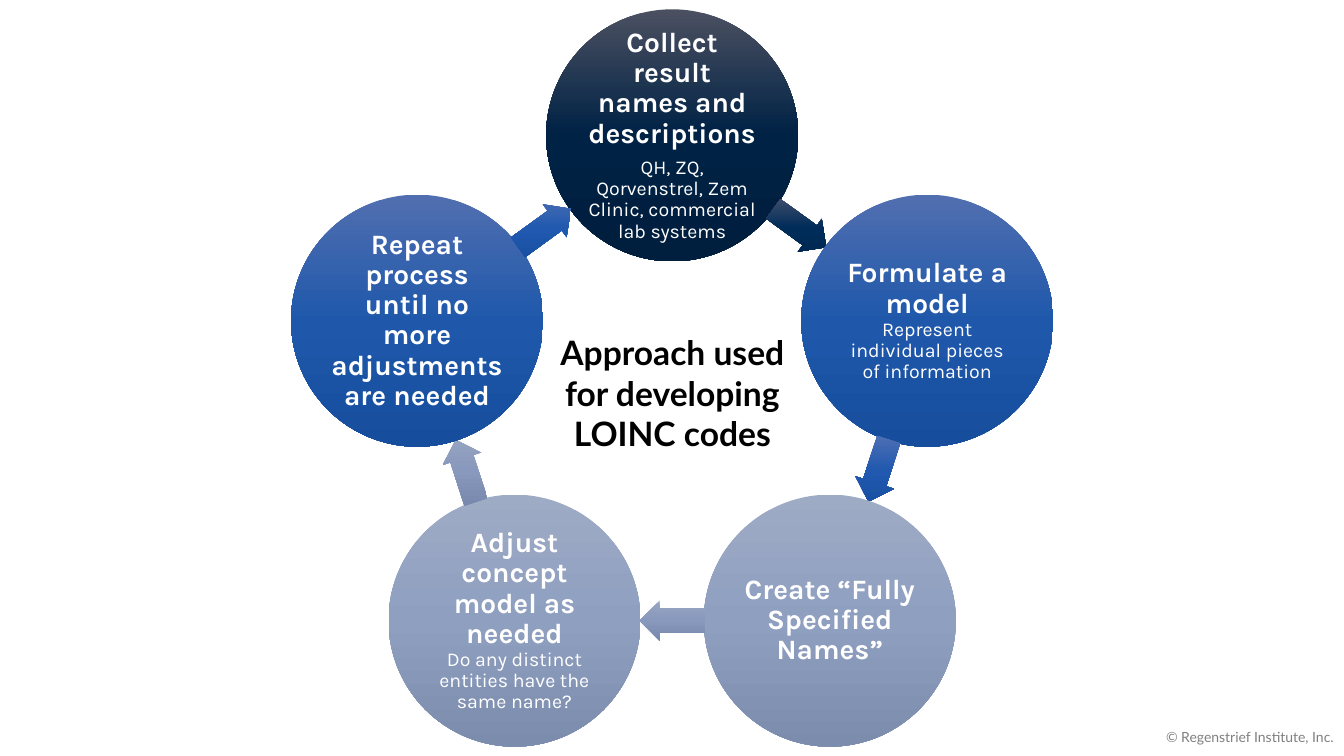
from copy import deepcopy
from math import cos, pi, sin

from pptx import Presentation
from pptx.dml import color
from pptx.enum import shapes, text
from pptx.util import Cm, Pt

CENTRE_X, CENTRE_Y, RING_RADIUS = 16.94, 10.17, 6.76
CIRCLE_SIZE = 6.35
ARROW_LENGTH, ARROW_HEIGHT = 1.65, 1.02

NAVY = (["4B5061", "002245", "001E3D"], ["4B546F", "002C59", "00274F"])
BLUE = (["516FB0", "1F58AB", "164D9D"], ["5170B4", "2059AF", "174EA1"])
GREY = (["9EABC5", "8F9FC0", "7C8CAD"], ["98A5C2", "8999BD", "7786AB"])

STEPS = [
    ("Collect result names and descriptions",
     "QH, ZQ,\vQorvenstrel, Zem Clinic, commercial lab systems", 6, NAVY),
    ("Formulate a model", "Represent individual pieces of information", 0, BLUE),
    ("Create “Fully Specified Names”", "", 0, GREY),
    ("Adjust concept model as needed",
     "Do any distinct entities have the same name?", 0, GREY),
    ("Repeat process until no more adjustments are needed", "", 0, BLUE),
]


def rgb(code):
    """Turn a hex string into a colour."""
    return color.RGBColor.from_string(code)


def ring_point(turn, radius):
    """Return the point on the ring after a number of fifths of a turn."""
    angle = turn * 2 * pi / 5
    return CENTRE_X + radius * sin(angle), CENTRE_Y - radius * cos(angle)


def add_gradient_shape(slide, kind, middle, size, colours):
    """Add a shape around its middle with a three-colour vertical gradient."""
    (x, y), (width, height) = middle, size
    shape = slide.shapes.add_shape(
        kind, Cm(x - width / 2), Cm(y - height / 2), Cm(width), Cm(height))
    shape.shadow.inherit = False
    shape.line.fill.background()
    shape.fill.gradient()
    shape.fill.gradient_angle = 270
    gradient = shape.fill._fill._gradFill
    gradient.set("rotWithShape", "0")
    first_stop = gradient.gsLst[0]
    first_stop.addnext(deepcopy(first_stop))
    for stop, code, position in zip(shape.fill.gradient_stops, colours, (0, 0.5, 1)):
        stop.color.rgb = rgb(code)
        stop.position = position
    return shape


def add_run(paragraph, words, font, size, code, bold=False):
    """Add one run, breaking the line at each vertical tab."""
    for index, line in enumerate(words.split("\v")):
        if index:
            paragraph.add_line_break()
        run = paragraph.add_run()
        run.text = line
        run.font.name, run.font.size, run.font.bold = font, Pt(size), bold
        run.font.color.rgb = rgb(code)


def add_step(slide, turn, heading, detail, gap, colours):
    """Add one circle of the cycle with its heading and detail."""
    circle = add_gradient_shape(
        slide, shapes.MSO_SHAPE.OVAL, ring_point(turn, RING_RADIUS),
        (CIRCLE_SIZE, CIRCLE_SIZE), colours)
    frame = circle.text_frame
    frame.word_wrap = True
    frame.vertical_anchor = text.MSO_ANCHOR.MIDDLE
    frame.margin_left = frame.margin_right = Cm(0.08)
    frame.margin_top = frame.margin_bottom = Cm(0.08)
    add_run(frame.paragraphs[0], heading, "Karla", 20, "FFFFFF", True)
    if detail:
        explanation = frame.add_paragraph()
        explanation.space_before = Pt(gap)
        add_run(explanation, detail, "Karla", 14, "FFFFFF")
    for paragraph in frame.paragraphs:
        paragraph.alignment = text.PP_ALIGN.CENTER
        paragraph.line_spacing = 0.9


def add_step_arrow(slide, turn, colours):
    """Add the arrow that leads from one step to the next."""
    arrow = add_gradient_shape(
        slide, shapes.MSO_SHAPE.RIGHT_ARROW,
        ring_point(turn + 0.5, RING_RADIUS * cos(pi / 5)),
        (ARROW_LENGTH, ARROW_HEIGHT), colours)
    arrow.adjustments[0] = 0.6
    arrow.adjustments[1] = 0.5
    arrow.rotation = 36 + 72 * turn


def add_label(slide, box, words, size, code, alignment, bold=False):
    """Add a wrapped text label that stands alone."""
    frame = slide.shapes.add_textbox(*map(Cm, box)).text_frame
    frame.word_wrap = True
    frame.vertical_anchor = text.MSO_ANCHOR.MIDDLE
    frame.paragraphs[0].alignment = alignment
    add_run(frame.paragraphs[0], words, "Lato", size, code, bold)


def main():
    """Build the slide and save it."""
    deck = Presentation()
    deck.slide_width, deck.slide_height = Cm(33.87), Cm(19.05)
    slide = deck.slides.add_slide(deck.slide_layouts[6])
    for turn, (heading, detail, gap, (circle_colours, arrow_colours)) in enumerate(STEPS):
        add_step(slide, turn, heading, detail, gap, circle_colours)
        add_step_arrow(slide, turn, arrow_colours)
    add_label(slide, (13.77, 8.23, 6.35, 3.33), "Approach used for developing LOINC codes",
              24, "000000", text.PP_ALIGN.CENTER, True)
    add_label(slide, (26.24, 18.06, 7.62, 1.02), "© Regenstrief Institute, Inc.",
              10, "808080", text.PP_ALIGN.RIGHT)
    deck.save("out.pptx")


if __name__ == "__main__":
    main()
